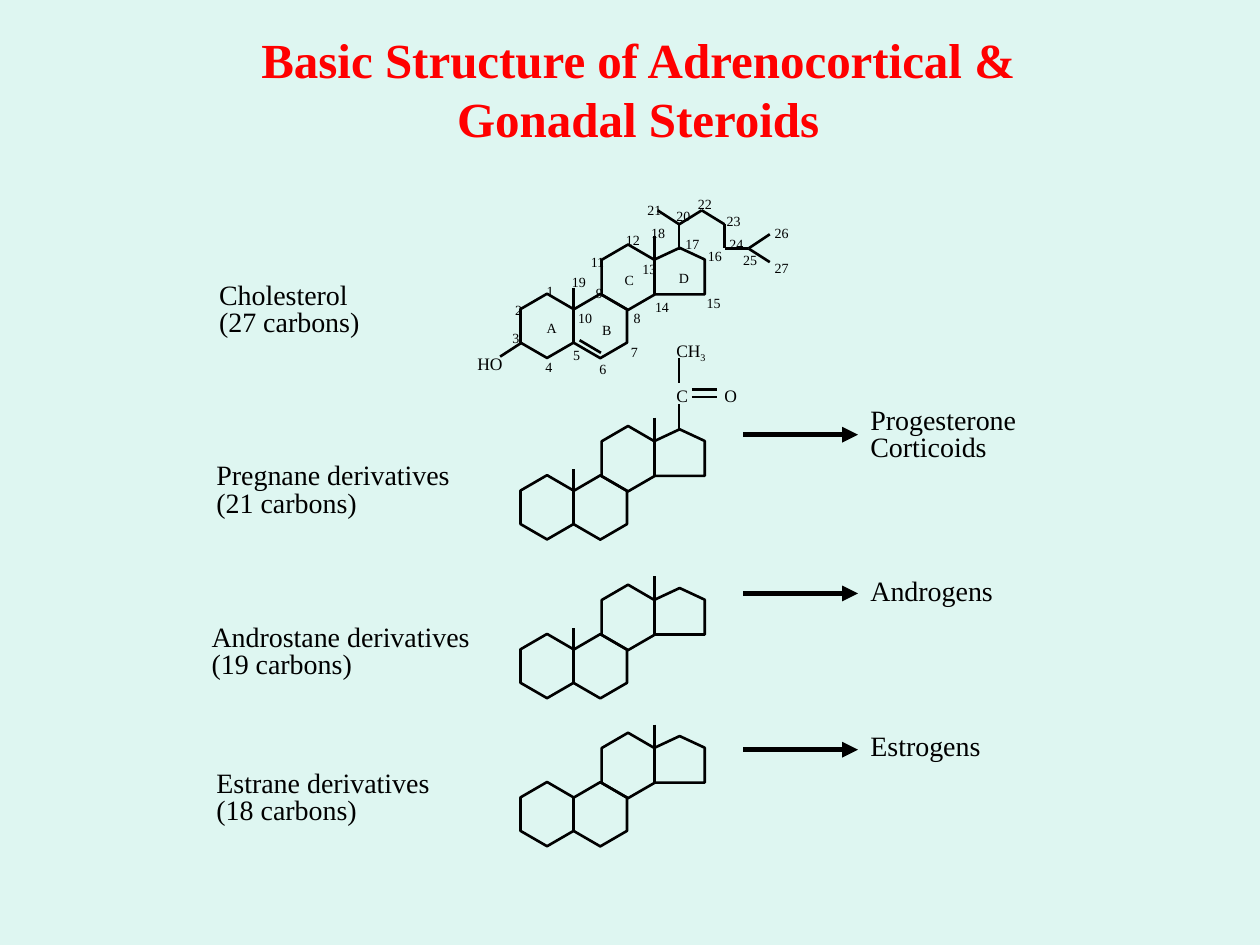
from lxml import etree
from pptx import Presentation
from pptx.dml.color import RGBColor
from pptx.enum import shapes, text
from pptx.oxml import ns
from pptx.util import Pt

FONT = "Times New Roman"
BLACK, RED, MINT = "000000", "FF0000", "DEF6F1"

RINGS = [
    (shapes.MSO_SHAPE.HEXAGON, 0.29, 340.2, 0, 37.4, 30.2),
    (shapes.MSO_SHAPE.PENTAGON, 0.25, 375.1, -2.7, 26.6, 28.6),
    (shapes.MSO_SHAPE.HEXAGON, 0.29, 324.7, 27.7, 36.7, 30.6),
    (shapes.MSO_SHAPE.HEXAGON, 0.29, 294.3, 27.7, 36.7, 30.4),
]
METHYL_18 = (373.9, -8.3)
METHYL_19 = (327.9, 21.2)
BOND = 14.4

CARBONS = [
    (305.3, 157.7), (287.3, 168.5), (285.8, 185), (304.6, 201.6), (320.4, 194.4),
    (335.5, 202.3), (353.5, 193), (355, 173.5), (333.4, 159.1), (323.3, 173.5),
    (330.5, 141.1), (350.6, 128.9), (360, 145.4), (367.2, 167), (396.7, 164.9),
    (397.4, 138.2), (384.5, 131), (365, 124.6), (319.7, 152.6), (379.4, 115.2),
    (362.9, 111.6), (391.7, 108), (408.2, 118.1), (409.7, 131), (417.6, 140.4),
    (435.6, 124.6), (435.6, 144.7),
]
RING_NAMES = [("A", 305.3, 179.3), ("B", 337, 180), ("C", 349.9, 151.9), ("D", 380.9, 150.5)]
SIDE_CHAIN = [(375.8, 120.2), (388.1, 128.2), (401, 120.2), (414, 128.2),
              (414, 142), (427.7, 142), (439.9, 133.9)]
CHOLESTEROL_BONDS = [
    (388.1, 128.2, 388.1, 142.6),
    (439.9, 149.8, 427.7, 142),
    (285.8, 203.8, 298.1, 195.8),
    (343.4, 201.6, 331.2, 194.4),
]
PREGNANE_BONDS = [
    (388.1, 204.5, 388.1, 218.9),
    (388.1, 231.1, 388.1, 245.5),
    (395.3, 226.8, 409.7, 226.8),
    (395.3, 222.5, 409.7, 222.5),
]
CAPTIONS = [
    (["Cholesterol", "(27 carbons)"], 118.1, 163.4, 107.3),
    (["Pregnane derivatives", "(21 carbons)"], 116.6, 266.4, 175.7),
    (["Androstane derivatives", "(19 carbons)"], 113.8, 358.6, 205.9),
    (["Estrane derivatives", "(18 carbons)"], 116.6, 442.1, 164.2),
    (["Progesterone", "Corticoids"], 490.3, 234.7, 139.7),
    (["Androgens"], 490.3, 332.6, 139.7),
    (["Estrogens"], 490.3, 421.2, 139.7),
]
ARROWS = [248.4, 339.1, 428.4]


def rgb(value):
    return RGBColor.from_string(value)


def style_run(r, size, color=BLACK, bold=False):
    r.font.name = FONT
    r.font.size = Pt(size)
    r.font.bold = bold
    r.font.color.rgb = rgb(color)


def add_title(s, words):
    sp = s.shapes.title
    sp.left, sp.top, sp.width, sp.height = Pt(126), Pt(13), Pt(477.4), Pt(74.9)
    tf = sp.text_frame
    tf.text = words
    tf.word_wrap = True
    tf.auto_size = text.MSO_AUTO_SIZE.NONE
    tf.vertical_anchor = text.MSO_ANCHOR.MIDDLE
    p = tf.paragraphs[0]
    p.alignment = text.PP_ALIGN.CENTER
    style_run(p.runs[0], 28, RED, True)


def add_line(parent, x1, y1, x2, y2, width=1.5, arrow=False):
    cx = parent.add_connector(shapes.MSO_CONNECTOR.STRAIGHT, Pt(x1), Pt(y1), Pt(x2), Pt(y2))
    cx.line.color.rgb = rgb(BLACK)
    cx.line.width = Pt(width)
    if arrow:
        etree.SubElement(cx.line._get_or_add_ln(), ns.qn("a:tailEnd"), type="triangle")
    etree.SubElement(cx._element.spPr, ns.qn("a:effectLst"))


def add_ring(parent, kind, adj, x, y, w, h):
    sp = parent.add_shape(kind, Pt(x), Pt(y), Pt(w), Pt(h))
    sp.adjustments[0] = adj
    sp.rotation = 270
    sp.shadow.inherit = False
    sp.fill.background()
    sp.line.color.rgb = rgb(BLACK)
    sp.line.width = Pt(1.5)


def add_skeleton(parent, top, methyls):
    for kind, adj, x, dy, w, h in RINGS:
        add_ring(parent, kind, adj, x, top + dy, w, h)
    for x, dy in methyls:
        add_line(parent, x, top + dy, x, top + dy + BOND)


def add_label(parent, words, x, y, w, size=8, subscript=None):
    tb = parent.add_textbox(Pt(x), Pt(y), Pt(w), Pt(17 if size == 8 else 19.4))
    tf = tb.text_frame
    tf.word_wrap = False
    tf.auto_size = text.MSO_AUTO_SIZE.SHAPE_TO_FIT_TEXT
    p = tf.paragraphs[0]
    p.text = words
    if subscript:
        r = p.add_run()
        r.text = subscript
        r._r.get_or_add_rPr().set("baseline", "-25000")
    for r in p.runs:
        style_run(r, size)


def add_caption(s, lines, x, y, w):
    tb = s.shapes.add_textbox(Pt(x), Pt(y), Pt(w), Pt(17.3 * len(lines)))
    tf = tb.text_frame
    tf.word_wrap = True
    tf.auto_size = text.MSO_AUTO_SIZE.SHAPE_TO_FIT_TEXT
    tf.text = "\n".join(lines)
    for p in tf.paragraphs:
        p.line_spacing = 0.5
        p.space_after = Pt(6)
        style_run(p.runs[0], 16)


def add_cholesterol(s):
    group = s.shapes.add_group_shape().shapes
    add_skeleton(group, 143.3, [METHYL_18, METHYL_19])
    for start, end in zip(SIDE_CHAIN, SIDE_CHAIN[1:]):
        add_line(group, *start, *end)
    for bond in CHOLESTEROL_BONDS:
        add_line(group, *bond)
    add_label(group, "HO", 265.7, 198, 30.2, 10)
    for name, x, y in RING_NAMES:
        add_label(group, name, x, y, 20.5)
    for number, (x, y) in enumerate(CARBONS, 1):
        add_label(group, str(number), x, y, 18.7 if number < 10 else 22.3)


def add_pregnane(s):
    group = s.shapes.add_group_shape().shapes
    add_skeleton(group, 247, [METHYL_18, METHYL_19])
    for bond in PREGNANE_BONDS:
        add_line(group, *bond)
    add_label(group, "CH", 379.4, 190.8, 33.1, 10, "3")
    add_label(group, "C", 379.4, 216.7, 21.6, 10)
    add_label(group, "O", 406.8, 216.7, 22.3, 10)


def main():
    prs = Presentation()
    prs.slide_width, prs.slide_height = Pt(720), Pt(540)
    s = prs.slides.add_slide(prs.slide_layouts[5])
    s.background.fill.solid()
    s.background.fill.fore_color.rgb = rgb(MINT)
    add_title(s, "Basic Structure of Adrenocortical & Gonadal Steroids")
    add_pregnane(s)
    add_cholesterol(s)
    for top, methyls in [(337.7, [METHYL_18, METHYL_19]), (422.3, [METHYL_18])]:
        add_skeleton(s.shapes.add_group_shape().shapes, top, methyls)
    for caption in CAPTIONS:
        add_caption(s, *caption)
    for y in ARROWS:
        add_line(s.shapes, 424.8, y, 490.3, y, 3, True)
    prs.save("out.pptx")


if __name__ == "__main__":
    main()
